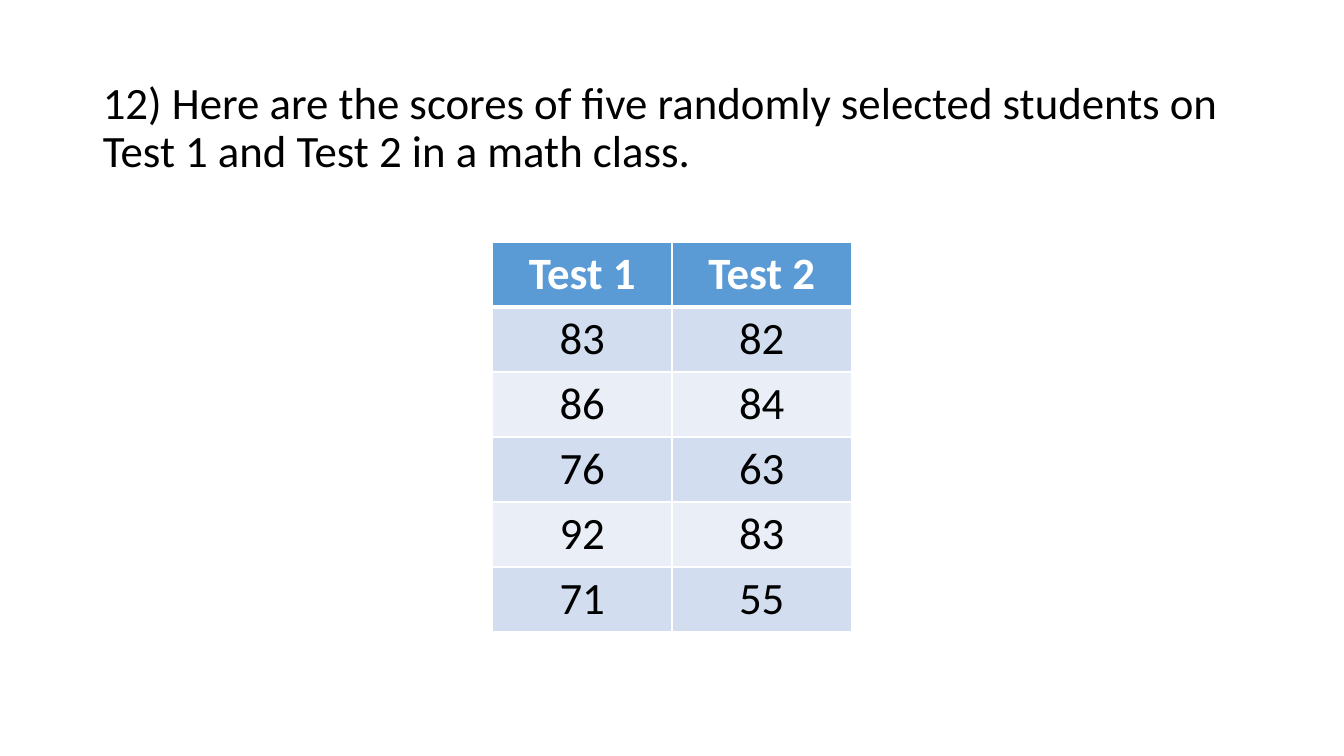
from lxml.etree import SubElement as Sub
from pptx import Presentation
from pptx.dml.color import RGBColor as Rgb
from pptx.enum.text import MSO_AUTO_SIZE as Fit, PP_ALIGN as Align
from pptx.oxml.ns import qn
from pptx.util import Inches, Pt

HUES = {"ink": "000000", "white": "FFFFFF", "head": "5B9BD5",
        "odd": "D2DEEF", "even": "EAEFF7"}
WIDE, HIGH = Inches(13.33), Inches(7.5)
COL, ROW = Inches(1.78), Inches(0.645)
TASK = ("12) Here are the scores of five randomly selected students "
        "on Test 1 and Test 2 in a math class.")
SCORES = [("Test 1", "Test 2"), (83, 82), (86, 84), (76, 63), (92, 83), (71, 55)]


def style(para, hue, bold=False):
    font = para.font
    font.name, font.size, font.bold = "Calibri", Pt(32), bold
    font.color.rgb = Rgb.from_string(HUES[hue])


def add_task(slide):
    title = slide.shapes.title
    title.element.getparent().remove(title.element)
    body = slide.placeholders[1]
    body.left, body.top = int(WIDE * 0.069), int(HIGH * 0.1)
    body.width, body.height = int(WIDE * 0.863), int(HIGH * 0.8)
    frame = body.text_frame
    frame.text = TASK
    frame.auto_size = Fit.NONE
    para = frame.paragraphs[0]
    para.line_spacing, para.space_before = 0.9, Pt(10)
    style(para, "ink")
    props = para._p.get_or_add_pPr()
    props.set("marL", "0")
    props.set("indent", "0")
    Sub(props, qn("a:buNone"))


def edge(cell, side, width):
    line = Sub(cell._tc.get_or_add_tcPr(), qn(f"a:ln{side}"), w=str(Pt(width)))
    fill = Sub(line, qn("a:solidFill"))
    Sub(fill, qn("a:srgbClr"), val=HUES["white"])


def fill_cell(cell, text, row):
    cell.text = str(text)
    para = cell.text_frame.paragraphs[0]
    para.alignment = Align.CENTER
    style(para, "ink" if row else "white", row == 0)
    for side in "LRTB":
        thick = (row, side) in ((0, "B"), (1, "T"))
        edge(cell, side, 3 if thick else 1)
    hue = "head" if row == 0 else "odd" if row % 2 else "even"
    cell.fill.solid()
    cell.fill.fore_color.rgb = Rgb.from_string(HUES[hue])


def add_scores(slide):
    rows, cols = len(SCORES), len(SCORES[0])
    wide = COL * cols
    grid = slide.shapes.add_table(rows, cols, (WIDE - wide) // 2,
                                  int(HIGH * 0.32), wide, ROW * rows).table
    for row, line in enumerate(SCORES):
        for col, text in enumerate(line):
            fill_cell(grid.cell(row, col), text, row)


def main():
    deck = Presentation()
    deck.slide_width, deck.slide_height = WIDE, HIGH
    slide = deck.slides.add_slide(deck.slide_layouts[1])
    add_task(slide)
    add_scores(slide)
    deck.save("out.pptx")


if __name__ == "__main__":
    main()
